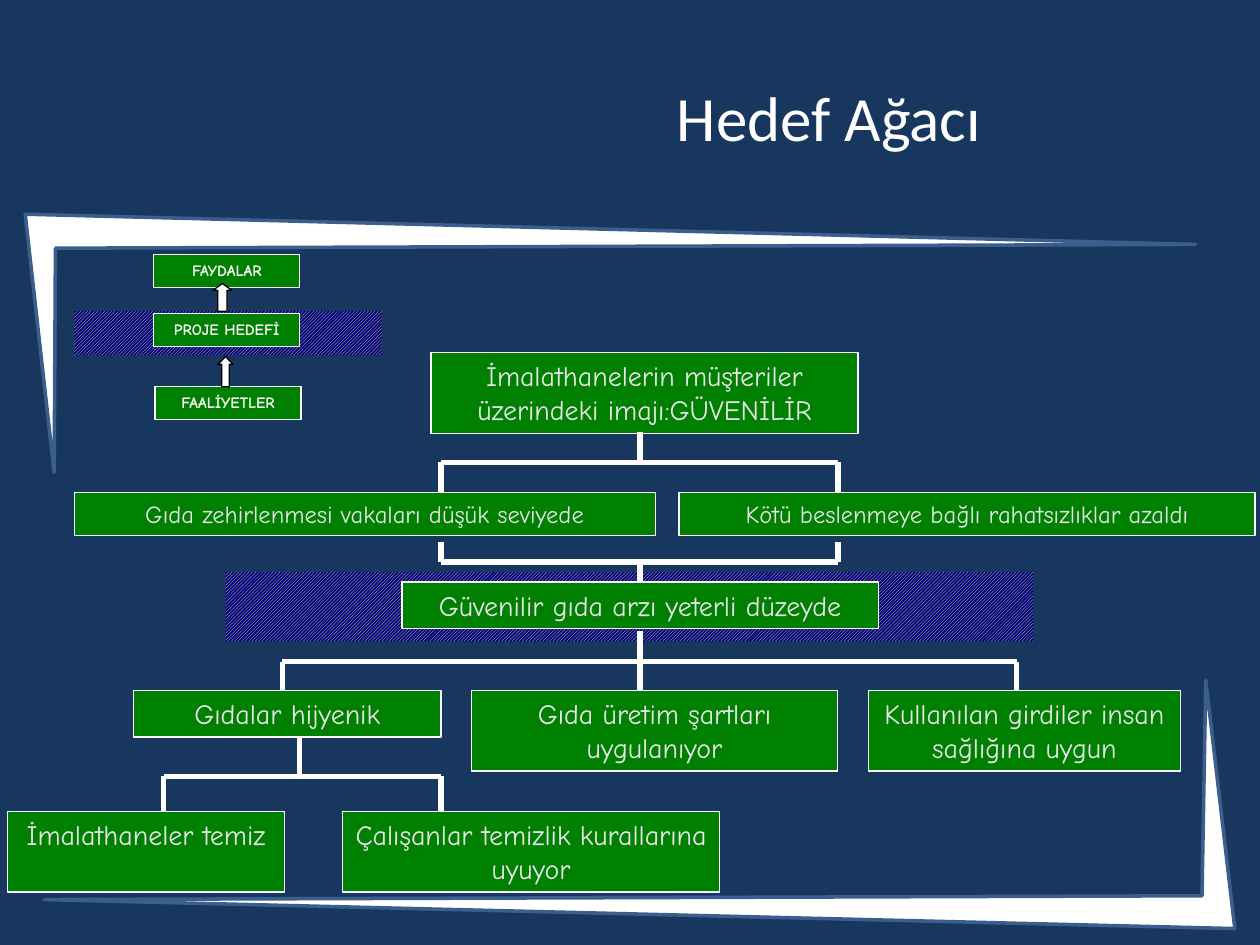
from lxml import etree
from pptx import Presentation
from pptx.dml.color import RGBColor
from pptx.enum.dml import MSO_PATTERN
from pptx.enum.shapes import MSO_CONNECTOR, MSO_SHAPE
from pptx.enum.text import MSO_ANCHOR, MSO_AUTO_SIZE, PP_ALIGN
from pptx.oxml.ns import qn
from pptx.util import Inches, Pt

RECT, UP_ARROW = MSO_SHAPE.RECTANGLE, MSO_SHAPE.UP_ARROW
STRAIGHT = MSO_CONNECTOR.STRAIGHT
HATCH = MSO_PATTERN.LIGHT_UPWARD_DIAGONAL
CENTER = PP_ALIGN.CENTER
TOP, MIDDLE = MSO_ANCHOR.TOP, MSO_ANCHOR.MIDDLE
GROW = MSO_AUTO_SIZE.SHAPE_TO_FIT_TEXT

HEX = {"bg": "17375E", "white": "FFFFFF", "frame": "3A5F8C", "green": "008000",
       "text": "EAEAEA", "navy": "000099", "yellow": "FFFF00", "black": "000000"}
C = {name: RGBColor.from_string(value) for name, value in HEX.items()}


def add_shape(shapes, kind, box, fill, line):
    sp = shapes.add_shape(kind, *[Inches(v) for v in box])
    sp.shadow.inherit = False
    if fill == "hatch":
        sp.fill.patterned()
        sp.fill.pattern = HATCH
        sp.fill.fore_color.rgb = C["yellow"]
        sp.fill.back_color.rgb = C["navy"]
        sp.line.fill.background()
    else:
        sp.fill.solid()
        sp.fill.fore_color.rgb = C[fill]
        sp.line.color.rgb = C[line]
        sp.line.width = Pt(0.75)
    return sp


def add_label(shapes, text, box, size, color, bold):
    tf = add_shape(shapes, RECT, box, "green", "white").text_frame
    for name, value in {"word_wrap": True, "auto_size": GROW, "vertical_anchor": TOP}.items():
        setattr(tf, name, value)
    p = tf.paragraphs[0]
    p.alignment = CENTER
    r = p.add_run()
    r.text = text
    for name, value in {"name": "Comic Neue", "size": Pt(size), "bold": bold}.items():
        setattr(r.font, name, value)
    r.font.color.rgb = C[color]


prs = Presentation()
prs.slide_width, prs.slide_height = Inches(10), Inches(7.5)
s = prs.slides.add_slide(prs.slide_layouts[5])
s.background.fill.solid()
s.background.fill.fore_color.rgb = C["bg"]

corners = [
    [(0.2, 1.7), (9.49, 1.94), (0.44, 1.97), (0.43, 3.75)],
    [(9.8, 7.37), (0.35, 7.14), (9.54, 7.11), (9.57, 5.4)],
]
for corner in corners:
    points = [(Inches(x), Inches(y)) for x, y in corner]
    builder = s.shapes.build_freeform(*points[0])
    builder.add_line_segments(points[1:], close=True)
    sp = builder.convert_to_shape()
    sp.shadow.inherit = False
    sp.fill.solid()
    sp.fill.fore_color.rgb = C["white"]
    sp.line.color.rgb = C["frame"]
    sp.line.width = Pt(2)

title = s.shapes.title
for name, value in {"left": 3.66, "top": 0.3, "width": 5.84, "height": 1.25}.items():
    setattr(title, name, Inches(value))
tf = title.text_frame
tf.vertical_anchor = MIDDLE
p = tf.paragraphs[0]
p.alignment = CENTER
r = p.add_run()
r.text = "Hedef Ağacı"
for name, value in {"name": "Calibri", "size": Pt(36)}.items():
    setattr(r.font, name, value)
r.font.color.rgb = C["white"]

legend = s.shapes.add_group_shape().shapes
add_shape(legend, RECT, (0.59, 2.47, 2.44, 0.35), "hatch", None)
for text, x, y in [("FAYDALAR", 1.22, 2.02), ("PROJE HEDEFİ", 1.22, 2.49),
                   ("FAALİYETLER", 1.23, 3.07)]:
    add_label(legend, text, (x, y, 1.16, 0.26), 9, "white", True)
for box, head in [((1.73, 2.83, 0.12, 0.24), 0.52), ((1.69, 2.25, 0.15, 0.22), 0.36)]:
    arrow = add_shape(legend, UP_ARROW, box, "white", "black")
    arrow.adjustments[0] = 0.5
    arrow.adjustments[1] = head

add_shape(s.shapes, RECT, (1.79, 4.54, 6.41, 0.55), "hatch", None)
goals = [
    ("Güvenilir gıda arzı yeterli düzeyde", (3.19, 4.62, 3.78, 0.37), 16),
    ("Gıda zehirlenmesi vakaları düşük seviyede", (0.59, 3.91, 4.61, 0.34), 14),
    ("Kötü beslenmeye bağlı rahatsızlıklar azaldı", (5.39, 3.91, 4.57, 0.34), 14),
    ("İmalathanelerin müşteriler üzerindeki imajı:GÜVENİLİR", (3.42, 2.8, 3.39, 0.64), 16),
    ("Gıdalar hijyenik", (1.06, 5.48, 2.44, 0.37), 16),
    ("Gıda üretim şartları uygulanıyor", (3.74, 5.48, 2.91, 0.64), 16),
    ("Kullanılan girdiler insan sağlığına uygun", (6.89, 5.48, 2.48, 0.64), 16),
    ("İmalathaneler temiz", (0.06, 6.44, 2.2, 0.64), 16),
    ("Çalışanlar temizlik kurallarına uyuyor", (2.72, 6.44, 2.99, 0.64), 16),
]
for text, box, size in goals:
    add_label(s.shapes, text, box, size, "text", False)

brackets = [
    (3.67, 3.91, (3.5, 6.65), 5.08, 3.43),
    (4.46, 4.3, (3.5, 6.65), 5.08, 4.62),
    (6.16, 6.44, (1.3, 3.5), 2.38, 5.85),
    (5.25, 5.48, (2.24, 5.08, 8.07), 5.08, 5.01),
]
for bar_y, branch_y, branches, stem_x, stem_y in brackets:
    lines = [(x, bar_y, x, branch_y) for x in branches]
    lines += [(branches[0], bar_y, branches[-1], bar_y), (stem_x, stem_y, stem_x, bar_y)]
    for line in lines:
        cx = s.shapes.add_connector(STRAIGHT, *[Inches(v) for v in line])
        cx.line.color.rgb = C["white"]
        cx.line.width = Pt(3)
        etree.SubElement(cx._element.spPr, qn("a:effectLst"))

prs.save("out.pptx")
